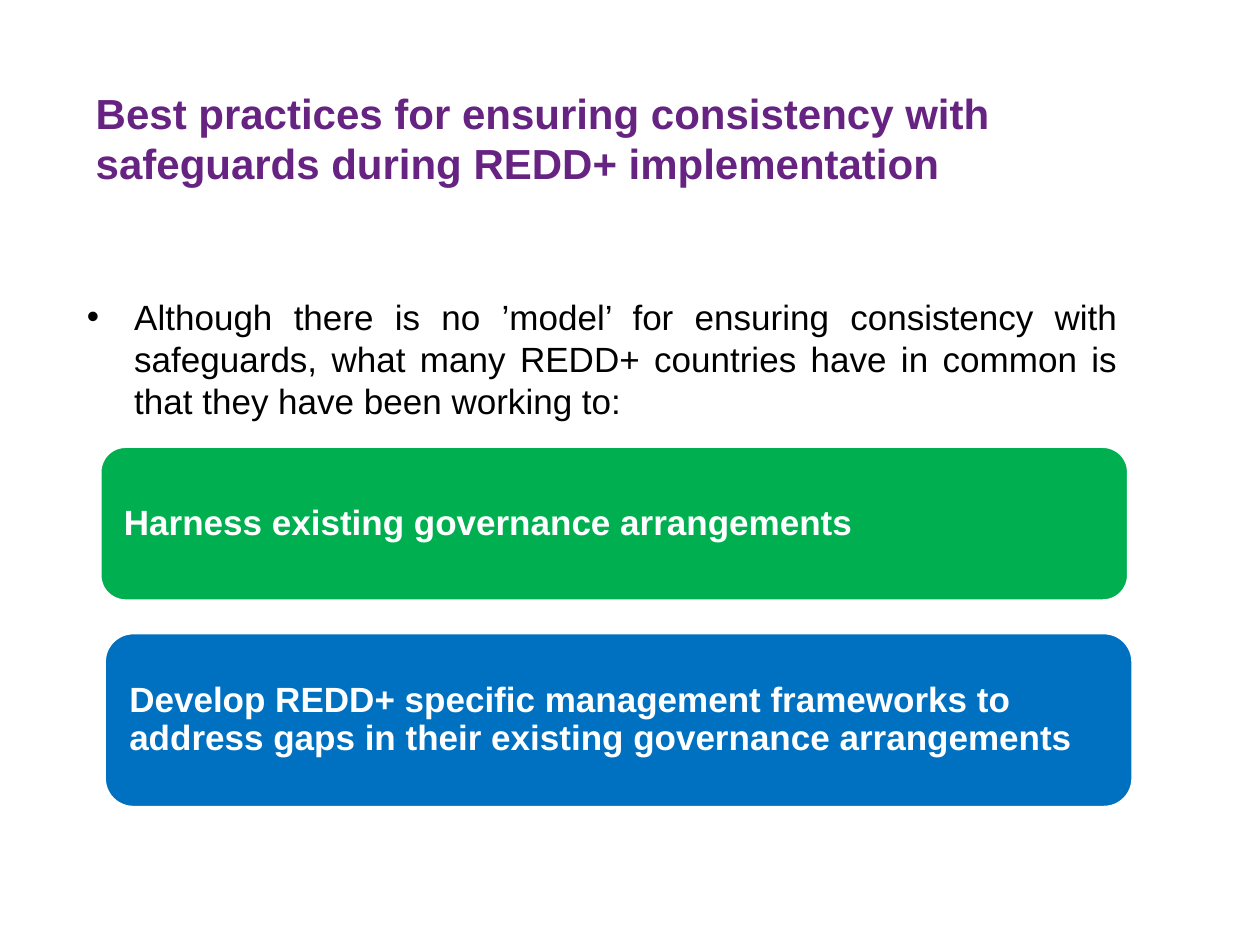
"""Build the slide on best practices for REDD+ safeguards."""
from dataclasses import dataclass

from lxml.etree import SubElement
from pptx import Presentation
from pptx.dml.color import RGBColor
from pptx.enum.shapes import MSO_SHAPE
from pptx.enum.text import MSO_ANCHOR, MSO_AUTO_SIZE, PP_ALIGN
from pptx.oxml.ns import qn
from pptx.util import Pt

PURPLE = RGBColor(0x66, 0x23, 0x82)
GREEN = RGBColor(0x00, 0xB0, 0x50)
BLUE = RGBColor(0x00, 0x70, 0xC0)
BLACK = RGBColor(0x00, 0x00, 0x00)
WHITE = RGBColor(0xFF, 0xFF, 0xFF)
FONT = "Arial"


@dataclass
class Box:
    left: float
    top: float
    width: float
    height: float


@dataclass
class Practice:
    text: str
    box: Box
    fill: RGBColor


PRACTICES = [
    Practice("Harness existing governance arrangements",
             Box(57, 255, 588, 88.5), GREEN),
    Practice("Develop REDD+ specific management frameworks to address gaps "
             "in their existing governance arrangements",
             Box(59.5, 361.5, 588, 100), BLUE),
]


def place(sp, box: Box) -> None:
    """Move and size a shape."""
    sp.left, sp.top = Pt(box.left), Pt(box.top)
    sp.width, sp.height = Pt(box.width), Pt(box.height)


def write(sp, text: str, *, size: float = 20, color: RGBColor = BLACK,
          bold: bool = False, align=PP_ALIGN.LEFT, anchor=MSO_ANCHOR.MIDDLE,
          spacing: float = 1.0, indent: float = 0) -> None:
    """Write one formatted paragraph, bulleted if indented."""
    tf = sp.text_frame
    tf.word_wrap = True
    tf.auto_size = MSO_AUTO_SIZE.NONE
    tf.vertical_anchor = anchor
    p = tf.paragraphs[0]
    p.alignment = align
    p.line_spacing = spacing
    p.space_before = Pt(0)
    if indent:
        pPr = p._p.get_or_add_pPr()
        pPr.set("marL", str(Pt(indent)))
        pPr.set("indent", str(-Pt(indent)))
        SubElement(pPr, qn("a:buChar"), char="•")
    r = p.add_run()
    r.text = text
    r.font.name = FONT
    r.font.size = Pt(size)
    r.font.bold = bold
    r.font.color.rgb = color


def add_practice(s, practice: Practice) -> None:
    """Draw a rounded box holding one practice."""
    b = practice.box
    sp = s.shapes.add_shape(MSO_SHAPE.ROUNDED_RECTANGLE, Pt(b.left), Pt(b.top),
                            Pt(b.width), Pt(b.height))
    sp.shadow.inherit = False
    sp.fill.solid()
    sp.fill.fore_color.rgb = practice.fill
    sp.line.color.rgb = WHITE
    sp.line.width = Pt(2)
    tf = sp.text_frame
    tf.margin_left = tf.margin_right = Pt(9.5)
    write(sp, practice.text, color=WHITE, bold=True, spacing=0.9)


def main() -> None:
    """Build and save the slide."""
    prs = Presentation()
    prs.slide_width, prs.slide_height = Pt(720), Pt(540)
    s = prs.slides.add_slide(prs.slide_layouts[1])
    title, body = s.shapes.title, s.placeholders[1]
    place(title, Box(47.5, 46, 625.5, 65.5))
    write(title, "Best practices for ensuring consistency with safeguards "
          "during REDD+ implementation", size=24, color=PURPLE, bold=True)
    place(body, Box(42.5, 165.5, 603.5, 85))
    write(body, "Although there is no ’model’ for ensuring consistency with "
          "safeguards, what many REDD+ countries have in common is that they "
          "have been working to:", align=PP_ALIGN.JUSTIFY,
          anchor=MSO_ANCHOR.TOP, indent=27)
    for practice in PRACTICES:
        add_practice(s, practice)
    prs.save("out.pptx")


if __name__ == "__main__":
    main()
